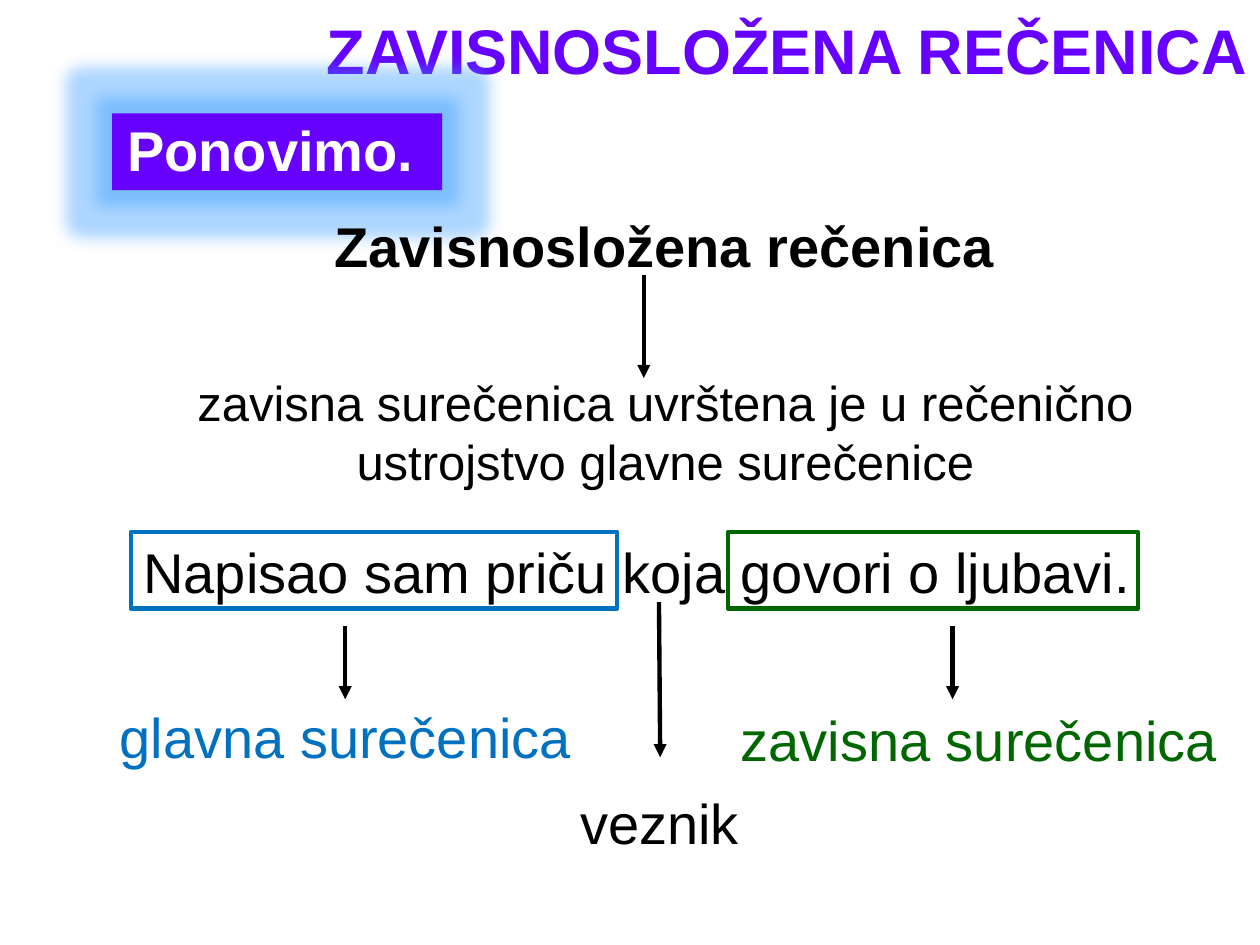
from lxml import etree
from pptx import Presentation
from pptx.dml.color import RGBColor
from pptx.enum.shapes import MSO_CONNECTOR, MSO_SHAPE
from pptx.enum.text import MSO_ANCHOR, MSO_AUTO_SIZE, PP_ALIGN
from pptx.oxml.ns import qn
from pptx.util import Inches, Pt

LEFT, CENTER, RIGHT = PP_ALIGN.LEFT, PP_ALIGN.CENTER, PP_ALIGN.RIGHT
TOP, BOTTOM = MSO_ANCHOR.TOP, MSO_ANCHOR.BOTTOM
RECT, STRAIGHT = MSO_SHAPE.RECTANGLE, MSO_CONNECTOR.STRAIGHT

BLACK = RGBColor(0x00, 0x00, 0x00)
WHITE = RGBColor(0xFF, 0xFF, 0xFF)
VIOLET = RGBColor(0x66, 0x00, 0xFF)
BLUE = RGBColor(0x00, 0x70, 0xC0)
GREEN = RGBColor(0x00, 0x66, 0x00)

SLIDE_W, SLIDE_H = Inches(10), Inches(7.5)
LINE_W = Pt(2.5)

# Shared positions, in percent of the slide's width or height
MAIN_X, DEPENDENT_X = 10.4, 57.8
SENTENCE_Y, FRAME_H, LINE_H = 56.27, 8.13, 8.53


def place(x, y, w, h):
    """Turn percentages of the slide into lengths."""
    return [int(size * share / 100) for size, share in
            ((SLIDE_W, x), (SLIDE_H, y), (SLIDE_W, w), (SLIDE_H, h))]


def fill_text(sp, text, size, color, bold=False, align=LEFT, anchor=TOP):
    tf = sp.text_frame
    tf.text = text
    tf.word_wrap = True
    tf.auto_size = MSO_AUTO_SIZE.NONE
    tf.vertical_anchor = anchor
    p = tf.paragraphs[0]
    p.alignment = align
    p.font.name, p.font.size, p.font.bold = "Arial", Pt(size), bold
    p.font.color.rgb = color
    return p


def add_title(s, box, text):
    sp = s.shapes.title
    sp.left, sp.top, sp.width, sp.height = place(*box)
    p = fill_text(sp, text, 36, VIOLET, True, RIGHT, BOTTOM)
    p.line_spacing = 0.9


def add_text(s, box, text, size=32, color=BLACK, **style):
    sp = s.shapes.add_textbox(*place(*box))
    fill_text(sp, text, size, color, **style)
    return sp


def add_box(s, box, fill, line=None):
    sp = s.shapes.add_shape(RECT, *place(*box))
    sp.shadow.inherit = False
    sp.fill.solid()
    sp.fill.fore_color.rgb = fill
    if line is None:
        sp.line.fill.background()
    else:
        sp.line.color.rgb = line
        sp.line.width = LINE_W
    return sp


def add_glow(sp, color, radius, alpha):
    effects = sp._element.spPr.find(qn("a:effectLst"))
    glow = etree.SubElement(effects, qn("a:glow"), rad=str(radius))
    clr = etree.SubElement(glow, qn("a:srgbClr"), val=color)
    etree.SubElement(clr, qn("a:alpha"), val=str(alpha * 1000))


def add_arrow(s, x1, y1, x2, y2):
    cn = s.shapes.add_connector(STRAIGHT, *place(x1, y1, x2, y2))
    cn.line.color.rgb = BLACK
    cn.line.width = LINE_W
    etree.SubElement(cn.line._get_or_add_ln(), qn("a:tailEnd"), type="triangle")
    etree.SubElement(cn._element.spPr, qn("a:effectLst"))


def main():
    prs = Presentation()
    prs.slide_width, prs.slide_height = SLIDE_W, SLIDE_H
    s = prs.slides.add_slide(prs.slide_layouts[5])

    # Title and glowing badge
    add_title(s, (22.3, -0.13, 77.7, 10.13), "ZAVISNOSLOŽENA REČENICA")
    badge = add_box(s, (8.9, 12, 26.2, FRAME_H), VIOLET)
    add_glow(badge, "3399FF", Pt(18), 40)
    label = add_text(s, (9.4, 8.67, 35.8, 11.2), "Ponovimo.", color=WHITE,
                     bold=True, anchor=BOTTOM)
    tf = label.text_frame
    tf.margin_left = tf.margin_right = Inches(0.07)
    tf.margin_top = tf.margin_bottom = Inches(0.04)
    tf.paragraphs[0].space_before = Pt(10)

    # Term and its definition
    add_text(s, (9.4, 21.73, 86.7, LINE_H), "Zavisnosložena rečenica",
             bold=True, align=CENTER)
    add_text(s, (6, 38.8, 93.6, 13.87),
             "zavisna surečenica uvrštena je u rečenično ustrojstvo glavne surečenice",
             size=28, align=CENTER)

    # Example sentence over its two framed clauses
    for x, w, color in ((MAIN_X, 38.6, BLUE), (DEPENDENT_X, 32.5, GREEN)):
        add_box(s, (x, SENTENCE_Y, w, FRAME_H), WHITE, color)
    add_text(s, (MAIN_X, SENTENCE_Y, 81.3, LINE_H),
             "Napisao sam priču koja govori o ljubavi.")

    # Names of the sentence parts
    add_text(s, (8.5, 73.73, 40.5, LINE_H), "glavna surečenica", color=BLUE)
    add_text(s, (DEPENDENT_X, 74, 48.6, LINE_H), "zavisna surečenica", color=GREEN)
    add_text(s, (37.6, 82.8, 29.5, LINE_H), "veznik", align=CENTER)

    # Arrows: term to definition, clauses and conjunction to their names
    for ends in ((51.1, 29.07, 51.1, 40), (27.4, 66.27, 27.4, 74),
                 (75.6, 66.27, 75.6, 74), (52.3, 63.73, 52.4, 80.13)):
        add_arrow(s, *ends)

    prs.save("out.pptx")


if __name__ == "__main__":
    main()
